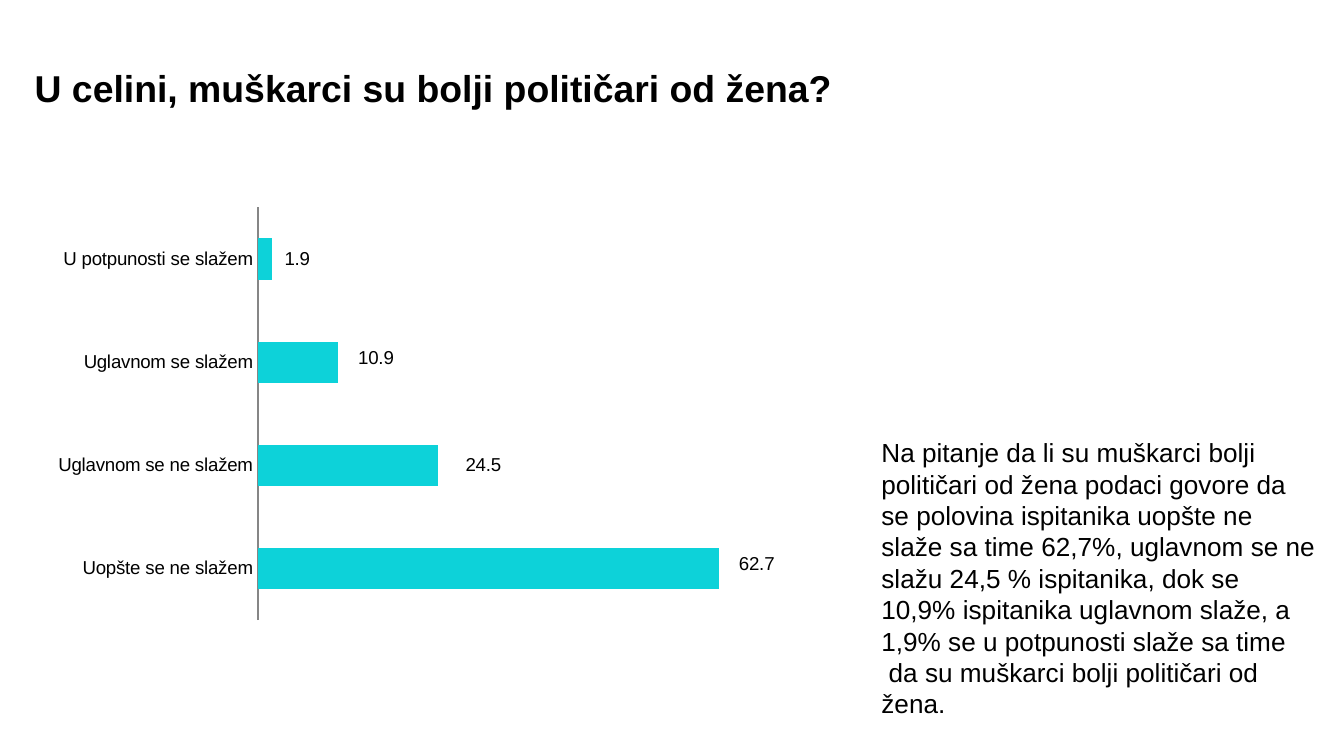
from lxml.etree import SubElement
from pptx import Presentation
from pptx.chart.data import CategoryChartData
from pptx.dml.color import RGBColor
from pptx.enum.chart import XL_CHART_TYPE, XL_LABEL_POSITION, XL_TICK_MARK
from pptx.enum.text import MSO_ANCHOR
from pptx.oxml import parse_xml
from pptx.oxml.ns import nsdecls, qn
from pptx.util import Inches, Pt

BLACK = RGBColor(0, 0, 0)
CYAN = RGBColor(0x0D, 0xD2, 0xD9)
GRAY = RGBColor(0x86, 0x86, 0x86)
WHITE = RGBColor(255, 255, 255)
FONT = "Arial"

TITLE = "U celini, muškarci su bolji političari od žena?"
NOTE = [
    "Na pitanje da li su muškarci bolji",
    "političari od žena podaci govore da",
    "se polovina ispitanika uopšte ne",
    "slaže sa time 62,7%, uglavnom se ne slažu 24,5 % ispitanika, dok se",
    "10,9% ispitanika uglavnom slaže, a",
    "1,9% se u potpunosti slaže sa time",
    " da su muškarci bolji političari od",
    "žena.",
]
ANSWERS = [
    ("Uopšte se ne slažem", 62.7, 0.02, -0.01),
    ("Uglavnom se ne slažem", 24.5, 0.03, 0),
    ("Uglavnom se slažem", 10.9, 0.02, -0.01),
    ("U potpunosti se slažem", 1.9, 0.01, 0),
]


def style(font, size, bold=False):
    font.name = FONT
    font.size = Pt(size)
    font.bold = bold
    font.color.rgb = BLACK


def add_text(slide, box, lines, size, bold=False, anchor=MSO_ANCHOR.TOP):
    frame = slide.shapes.add_textbox(*map(Inches, box)).text_frame
    frame.word_wrap = True
    frame.vertical_anchor = anchor
    for i, line in enumerate(lines):
        para = frame.add_paragraph() if i else frame.paragraphs[0]
        run = para.add_run()
        run.text = line
        style(run.font, size, bold)


def make_layout(**values):
    layout = parse_xml(f"<c:layout {nsdecls('c')}/>")
    manual = SubElement(layout, qn("c:manualLayout"))
    for name, value in values.items():
        SubElement(manual, qn(f"c:{name}")).set("val", str(value))
    return layout


def place_plot(chart):
    area = chart.element.find(".//" + qn("c:plotArea"))
    old = area.find(qn("c:layout"))
    if old is not None:
        area.remove(old)
    area.insert(0, make_layout(layoutTarget="inner", xMode="edge", yMode="edge",
                               x=0.29, y=0.02, w=0.69, h=0.96))


def add_labels(chart, series):
    for i in range(len(ANSWERS)):
        series.points[i].data_label.position = XL_LABEL_POSITION.OUTSIDE_END
    labels = series.data_labels
    labels.show_value = True
    labels.position = XL_LABEL_POSITION.OUTSIDE_END
    style(labels.font, 10)
    nodes = list(chart.element.iter(qn("c:dLbl")))
    for node, (_, _, dx, dy) in zip(nodes, ANSWERS):
        node.insert(1, make_layout(x=dx, y=dy))
    for lead in chart.element.iter(qn("c:showLeaderLines")):
        lead.set("val", "0")


def add_bars(slide, box):
    data = CategoryChartData()
    data.categories = [row[0] for row in ANSWERS]
    data.add_series("Series 1", [row[1] for row in ANSWERS])
    chart = slide.shapes.add_chart(
        XL_CHART_TYPE.BAR_CLUSTERED, *map(Inches, box), data).chart
    chart.has_legend = False
    chart.has_title = False
    style(chart.font, 10)

    plot = chart.plots[0]
    plot.gap_width = 150
    plot.vary_by_categories = False
    series = plot.series[0]
    series.format.fill.solid()
    series.format.fill.fore_color.rgb = CYAN
    add_labels(chart, series)

    cats = chart.category_axis
    cats.major_tick_mark = XL_TICK_MARK.NONE
    cats.format.line.color.rgb = GRAY
    cats.format.line.width = Pt(0.75)
    vals = chart.value_axis
    vals.visible = False
    vals.has_major_gridlines = False
    vals.minimum_scale = 0
    vals.maximum_scale = 70
    place_plot(chart)


def main():
    deck = Presentation()
    deck.slide_width = Inches(10)
    deck.slide_height = Inches(10) * 9 // 16
    slide = deck.slides.add_slide(deck.slide_layouts[6])
    slide.background.fill.solid()
    slide.background.fill.fore_color.rgb = WHITE
    add_text(slide, (6.46, 3.2, 3.43, 2.22), NOTE, 14)
    add_text(slide, (0.16, 0.23, 10, 0.85), [TITLE], 20, True, MSO_ANCHOR.MIDDLE)
    add_bars(slide, (0.31, 1.48, 5.55, 3.2))
    deck.save("out.pptx")


if __name__ == "__main__":
    main()
